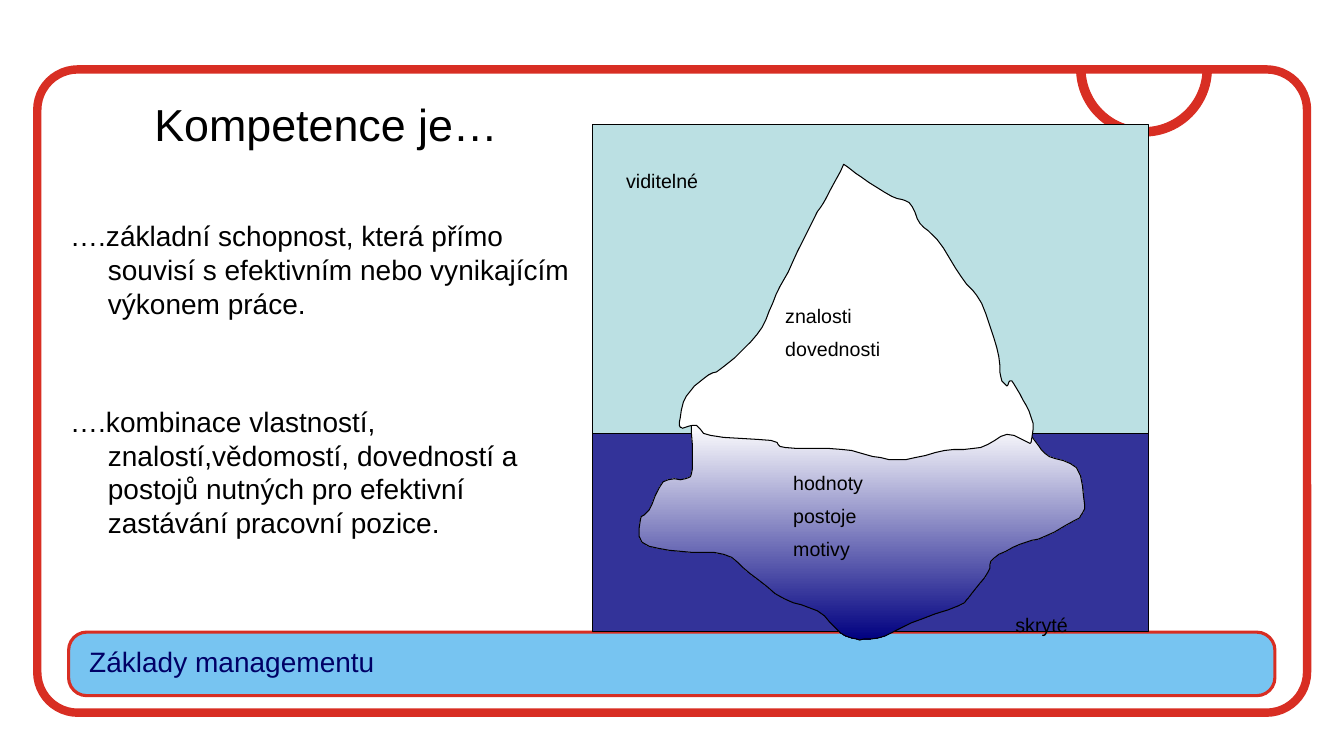
from pptx import Presentation
from pptx.dml.color import RGBColor
from pptx.enum.shapes import MSO_SHAPE as SHAPE
from pptx.enum.text import PP_ALIGN as ALIGN
from pptx.util import Cm, Pt

RED = RGBColor(0xD8, 0x2E, 0x23)
BAR_BLUE = RGBColor(0x77, 0xC4, 0xF1)
SKY = RGBColor(0xBB, 0xE0, 0xE3)
SEA = RGBColor(0x33, 0x33, 0x99)
DEEP = RGBColor(0x00, 0x00, 0x80)
NAVY = RGBColor(0x00, 0x00, 0x66)
WHITE = RGBColor(0xFF, 0xFF, 0xFF)
BLACK = RGBColor(0x00, 0x00, 0x00)

# Content: text, size, space before
BODY = [
    ("Kompetence je…", 32, 0),
    ("….základní schopnost, která přímo souvisí s efektivním nebo "
     "vynikajícím výkonem práce.", 20, 49),
    ("….kombinace vlastností, znalostí,vědomostí, dovedností a postojů "
     "nutných pro efektivní zastávání pracovní pozice.", 20, 60.5),
]
FOOTER = "Základy managementu"

# Labels: left, top, width, height in cm, then lines
LABELS = [
    (15.53, 4.14, 3.4, 0.86, ["viditelné"]),
    (25.34, 15.32, 3, 0.86, ["skryté"]),
    (19.54, 7.53, 3.81, 1.75, ["znalosti", "dovednosti"]),
    (19.74, 11.73, 4.39, 2.64, ["hodnoty", "postoje", "motivy"]),
]

# Picture panel in cm: the waterline divides sky from sea
PANEL_LEFT, PANEL_WIDTH = 14.94, 14
SKY_TOP, WATERLINE, SEA_BOTTOM = 3.14, 10.92, 15.92

# Iceberg edges: key points in steps of GRID, smooth along each edge and
# with a corner where one edge meets the next
GRID = Cm(0.0254)
CURVE_STEPS = 4
VISIBLE_EDGES = {
    "left slope": [(677, 425), (674, 419), (681, 393), (699, 375), (715, 366),
                   (734, 350), (756, 325), (770, 292), (786, 261), (808, 216),
                   (819, 198), (837, 163)],
    "right slope": [(837, 163), (855, 176), (885, 195), (902, 201), (913, 222),
                    (930, 238), (954, 275), (974, 301), (989, 345), (993, 374),
                    (999, 383)],
    "right ledge": [(999, 383), (1004, 378), (1015, 397), (1025, 420),
                    (1022, 443)],
    "foot": [(1022, 440), (999, 431), (973, 444), (937, 447), (899, 456),
             (866, 453), (836, 446), (779, 444), (765, 437), (705, 432),
             (691, 422), (677, 425)],
}
HIDDEN_EDGES = {
    "left notch": [(686, 421), (687, 465), (680, 475), (658, 478), (644, 506),
                   (636, 513)],
    "left underside": [(636, 513), (637, 538), (675, 547), (718, 550),
                       (744, 569), (778, 594), (811, 606), (834, 628),
                       (853, 635)],
    "right underside": [(853, 635), (878, 631), (904, 618), (951, 601),
                        (964, 589), (980, 568), (986, 554), (1012, 540),
                        (1037, 532), (1071, 514)],
    "right side": [(1071, 514), (1076, 500), (1068, 464), (1041, 453),
                   (1028, 439), (1018, 425)],
    "top": [(1018, 425), (686, 421)],
}


def smooth(points):
    """Sample a Catmull-Rom curve through the points, without the last one."""
    padded = [points[0], *points, points[-1]]
    curve = []
    for a, b, c, d in zip(padded, padded[1:], padded[2:], padded[3:]):
        for step in range(CURVE_STEPS):
            t = step / CURVE_STEPS
            curve.append(tuple(
                q + t / 2 * (r - p + t * (2 * p - 5 * q + 4 * r - w
                                          + t * (3 * (q - r) + w - p)))
                for p, q, r, w in zip(a, b, c, d)))
    return curve


def paint(sp, fill, line, width):
    sp.shadow.inherit = False
    if fill is None:
        sp.fill.background()
    else:
        sp.fill.solid()
        sp.fill.fore_color.rgb = fill
    sp.line.color.rgb = line
    sp.line.width = Pt(width)
    return sp


def add_box(kind, box, fill, line, width):
    sp = s.shapes.add_shape(kind, *map(Cm, box))
    return paint(sp, fill, line, width)


def add_ice(edges):
    start, *rest = [point for edge in edges.values() for point in smooth(edge)]
    builder = s.shapes.build_freeform(*start, scale=GRID)
    builder.add_line_segments(rest, close=True)
    return paint(builder.convert_to_shape(), WHITE, BLACK, 0.75)


def add_text(box, lines, color=BLACK):
    tf = s.shapes.add_textbox(*map(Cm, box)).text_frame
    tf.word_wrap = True
    for i, (text, size, before) in enumerate(lines):
        p = tf.add_paragraph() if i else tf.paragraphs[0]
        p.text = text
        p.space_before = Pt(before)
        font = p.runs[0].font
        font.name, font.size, font.color.rgb = "Arial", Pt(size), color
    return tf


prs = Presentation()
prs.slide_width, prs.slide_height = Cm(33.87), Cm(19.05)
s = prs.slides.add_slide(prs.slide_layouts[6])

# Frame, half ring and footer bar
frame = add_box(SHAPE.ROUNDED_RECTANGLE, (0.94, 1.75, 32, 16.21), None, RED, 6)
frame.adjustments[0] = 0.063
ring = add_box(SHAPE.BLOCK_ARC, (27.13, 0.03, 3.4, 3.4), RED, RED, 0.75)
ring.rotation = 180
ring.adjustments[2] = 0.063
bar = add_box(SHAPE.ROUNDED_RECTANGLE, (1.73, 15.93, 30.4, 1.6), BAR_BLUE, RED, 2.25)
bar.adjustments[0] = 0.285

# Title and definitions with a hanging indent
tf = add_text((1.52, 2.31, 13.41, 14.71), BODY)
for p in tf.paragraphs:
    pPr = p._p.get_or_add_pPr()
    pPr.set("marL", str(Cm(0.95)))
    pPr.set("indent", str(-Cm(0.95)))
tf.paragraphs[0].alignment = ALIGN.CENTER

# Sky and sea
for top, bottom, color in [(SKY_TOP, WATERLINE, SKY), (WATERLINE, SEA_BOTTOM, SEA)]:
    add_box(SHAPE.RECTANGLE, (PANEL_LEFT, top, PANEL_WIDTH, bottom - top),
            color, BLACK, 0.75)

# Iceberg: the visible part covers the top of the hidden one
hidden = add_ice(HIDDEN_EDGES)
hidden.fill.gradient()
hidden.fill.gradient_angle = 270
for stop, color in zip(hidden.fill.gradient_stops, (WHITE, DEEP)):
    stop.color.rgb = color
add_ice(VISIBLE_EDGES)

# Labels and footer
for *box, lines in LABELS:
    add_text(box, [(text, 14, 7 if i else 0) for i, text in enumerate(lines)])
add_text((2, 16.11, 11.48, 1.32), [(FOOTER, 20, 0)], NAVY)

prs.save("out.pptx")
